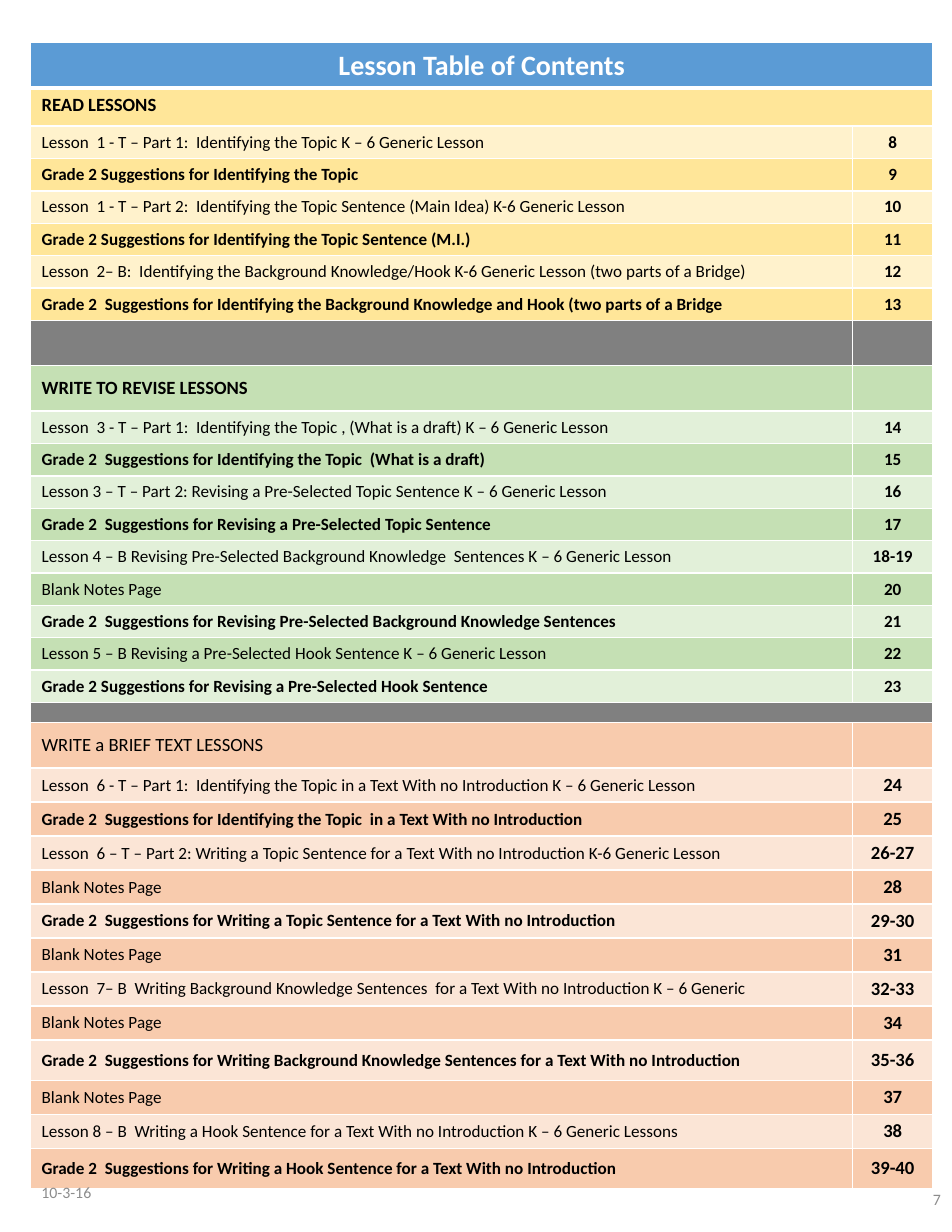
from dataclasses import dataclass

from lxml import etree
from pptx import Presentation
from pptx.dml.color import RGBColor
from pptx.enum.text import MSO_ANCHOR, PP_ALIGN
from pptx.oxml.ns import qn
from pptx.util import Cm, Pt

LEFT, CENTER, RIGHT = PP_ALIGN.LEFT, PP_ALIGN.CENTER, PP_ALIGN.RIGHT
TOP, MIDDLE = MSO_ANCHOR.TOP, MSO_ANCHOR.MIDDLE
FONT = "Calibri"
WHITE, BLACK, GRAY, BLUE, FOOTER_GRAY = "FFFFFF", "000000", "808080", "5B9BD5", "8C8C8C"
TALL_ROW = 1.03


@dataclass
class Section:
    title: str
    dark: str
    light: str
    lessons: list[tuple[str, str]]
    row_height: float = 0.73
    title_height: float = TALL_ROW
    title_bold: bool = True
    title_anchor: MSO_ANCHOR = MIDDLE
    merged: bool = False
    page_size: int = 11
    tall_pages: tuple[str, ...] = ()


@dataclass
class Row:
    height: float
    fill: str
    text: str = ""
    page: str = ""
    size: float = 11
    page_size: float = 11
    bold: bool = False
    color: str = BLACK
    align: PP_ALIGN = LEFT
    anchor: MSO_ANCHOR = MIDDLE
    merged: bool = False
    bottom_border: float = 1


BLANK_NOTES = "Blank Notes Page"
SECTIONS = [
    Section("READ LESSONS", "FFE699", "FFF2CC", [
        ("Lesson  1 - T – Part 1:  Identifying the Topic K – 6 Generic Lesson", "8"),
        ("Grade 2 Suggestions for Identifying the Topic", "9"),
        ("Lesson  1 - T – Part 2:  Identifying the Topic Sentence (Main Idea) K-6 Generic Lesson", "10"),
        ("Grade 2 Suggestions for Identifying the Topic Sentence (M.I.)", "11"),
        ("Lesson  2– B:  Identifying the Background Knowledge/Hook K-6 Generic Lesson (two parts of a Bridge)", "12"),
        ("Grade 2  Suggestions for Identifying the Background Knowledge and Hook (two parts of a Bridge", "13"),
    ], title_height=0.86, title_anchor=TOP, merged=True),
    Section("WRITE TO REVISE LESSONS", "C5E0B4", "E2F0D9", [
        ("Lesson  3 - T – Part 1:  Identifying the Topic , (What is a draft) K – 6 Generic Lesson", "14"),
        ("Grade 2  Suggestions for Identifying the Topic  (What is a draft)", "15"),
        ("Lesson 3 – T – Part 2: Revising a Pre-Selected Topic Sentence K – 6 Generic Lesson", "16"),
        ("Grade 2  Suggestions for Revising a Pre-Selected Topic Sentence", "17"),
        ("Lesson 4 – B Revising Pre-Selected Background Knowledge  Sentences K – 6 Generic Lesson", "18-19"),
        (BLANK_NOTES, "20"),
        ("Grade 2  Suggestions for Revising Pre-Selected Background Knowledge Sentences", "21"),
        ("Lesson 5 – B Revising a Pre-Selected Hook Sentence K – 6 Generic Lesson", "22"),
        ("Grade 2 Suggestions for Revising a Pre-Selected Hook Sentence", "23"),
    ]),
    Section("WRITE a BRIEF TEXT LESSONS", "F8CBAD", "FBE5D6", [
        ("Lesson  6 - T – Part 1:  Identifying the Topic in a Text With no Introduction K – 6 Generic Lesson", "24"),
        ("Grade 2  Suggestions for Identifying the Topic  in a Text With no Introduction", "25"),
        ("Lesson  6 – T – Part 2: Writing a Topic Sentence for a Text With no Introduction K-6 Generic Lesson", "26-27"),
        (BLANK_NOTES, "28"),
        ("Grade 2  Suggestions for Writing a Topic Sentence for a Text With no Introduction", "29-30"),
        (BLANK_NOTES, "31"),
        ("Lesson  7– B  Writing Background Knowledge Sentences  for a Text With no Introduction K – 6 Generic", "32-33"),
        (BLANK_NOTES, "34"),
        ("Grade 2  Suggestions for Writing Background Knowledge Sentences for a Text With no Introduction", "35-36"),
        (BLANK_NOTES, "37"),
        ("Lesson 8 – B  Writing a Hook Sentence for a Text With no Introduction K – 6 Generic Lessons", "38"),
        ("Grade 2  Suggestions for Writing a Hook Sentence for a Text With no Introduction", "39-40"),
    ], row_height=0.77, title_bold=False, page_size=12, tall_pages=("35-36", "39-40")),
]
# Gray bands that follow the first and second sections
DIVIDERS = [Row(TALL_ROW, GRAY, size=18, page_size=18),
            Row(0.46, GRAY, size=4, page_size=4, merged=True)]


def rgb(value: str) -> RGBColor:
    return RGBColor.from_string(value)


def write_text(frame, text: str, size: float, color: str, bold: bool, align: PP_ALIGN) -> None:
    paragraph = frame.paragraphs[0]
    paragraph.alignment = align
    if not text:
        # The end mark sets the line height of an empty cell
        etree.SubElement(paragraph._p, qn("a:endParaRPr"), sz=str(int(size * 100)))
        return
    run = paragraph.add_run()
    run.text = text
    font_format = {"name": FONT, "size": Pt(size), "bold": bold}
    for name, value in font_format.items():
        setattr(run.font, name, value)
    run.font.color.rgb = rgb(color)


def style_cell(cell, row: Row) -> None:
    properties = cell._tc.get_or_add_tcPr()
    borders = {"lnL": 1, "lnR": 1, "lnT": 1, "lnB": row.bottom_border}
    for side, width in borders.items():
        line = etree.SubElement(properties, qn(f"a:{side}"), w=str(Pt(width)))
        fill = etree.SubElement(line, qn("a:solidFill"))
        etree.SubElement(fill, qn("a:srgbClr"), val=WHITE)
    cell.fill.solid()
    cell.fill.fore_color.rgb = rgb(row.fill)
    cell.vertical_anchor = row.anchor


def section_rows(section: Section) -> list[Row]:
    rows = [Row(section.title_height, section.dark, section.title, size=12, page_size=12,
                bold=section.title_bold, anchor=section.title_anchor, merged=section.merged)]
    for index, (text, page) in enumerate(section.lessons):
        rows.append(Row(
            height=0.91 if page in section.tall_pages else section.row_height,
            fill=section.dark if index % 2 else section.light,
            text=text, page=page, page_size=section.page_size,
            bold=text.startswith("Grade")))
    return rows


def contents_rows() -> list[Row]:
    rows = [Row(TALL_ROW, BLUE, "Lesson Table of Contents", size=18, bold=True, color=WHITE,
                align=CENTER, anchor=TOP, merged=True, bottom_border=3)]
    for index, section in enumerate(SECTIONS):
        rows += section_rows(section) + DIVIDERS[index:index + 1]
    return rows


def add_contents_table(slide, rows: list[Row]) -> None:
    height = sum(row.height for row in rows)
    table = slide.shapes.add_table(len(rows), 2, Cm(0.69), Cm(0.97), Cm(20.47), Cm(height)).table
    table.first_row = table.horz_banding = False
    for column, width in zip(table.columns, (18.64, 1.83)):
        column.width = Cm(width)
    for index, row in enumerate(rows):
        table.rows[index].height = Cm(row.height)
        lesson_cell, page_cell = table.cell(index, 0), table.cell(index, 1)
        if row.merged:
            lesson_cell.merge(page_cell)
        for cell in (lesson_cell, page_cell):
            style_cell(cell, row)
        write_text(lesson_cell.text_frame, row.text, row.size, row.color, row.bold, row.align)
        write_text(page_cell.text_frame, row.page, row.page_size, BLACK, True, CENTER)


def add_footer(slide, left: float, top: float, text: str, align: PP_ALIGN) -> None:
    frame = slide.shapes.add_textbox(Cm(left), Cm(top), Cm(4.85), Cm(1.5)).text_frame
    frame.word_wrap = True
    frame.vertical_anchor = MIDDLE
    write_text(frame, text, 10.2, FOOTER_GRAY, False, align)


def main() -> None:
    presentation = Presentation()
    presentation.slide_width, presentation.slide_height = Cm(21.59), Cm(27.94)
    slide = presentation.slides.add_slide(presentation.slide_layouts[6])
    # Table of contents
    add_contents_table(slide, contents_rows())
    # Page number and date
    add_footer(slide, 16.74, 26.44, "7", RIGHT)
    add_footer(slide, 0.69, 26.29, "10-3-16", LEFT)
    presentation.save("out.pptx")


if __name__ == "__main__":
    main()
